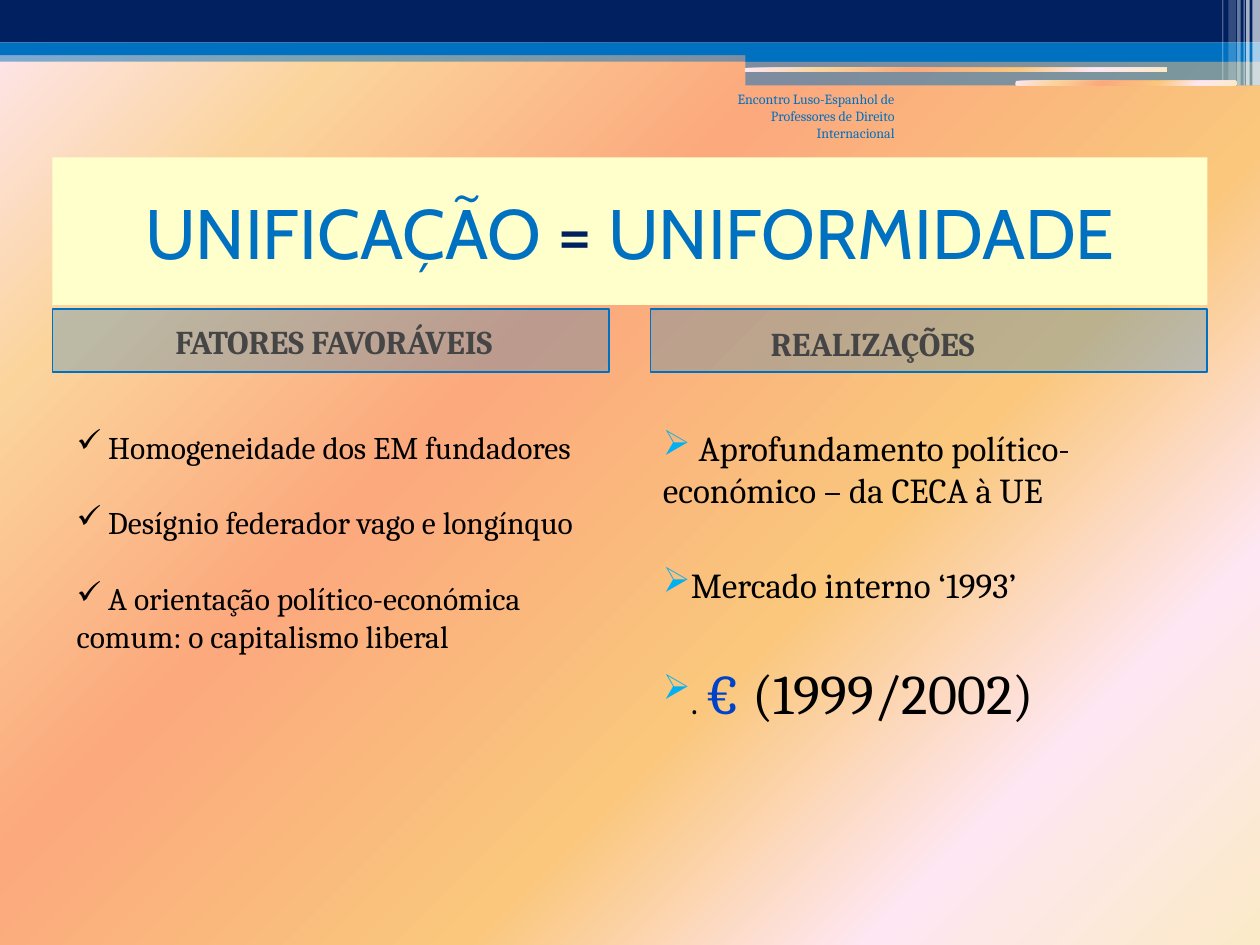
from lxml.etree import SubElement
from pptx import Presentation
from pptx.dml.color import RGBColor
from pptx.enum.shapes import MSO_SHAPE
from pptx.enum.text import MSO_ANCHOR, PP_ALIGN
from pptx.oxml.ns import qn
from pptx.util import Pt

COLORS = {
    "navy": "002060", "blue": "0070C0", "white": "FFFFFF", "cream": "FFFFCC",
    "gray": "454545", "black": "000000", "euro": "0042C8", "sky": "00B0F0",
}
SUNSET = [(0, "FBEAC7"), (18, "FEE7F2"), (36, "FAC77D"),
          (61, "FBA97D"), (82, "FBD49C"), (100, "FEE7F2")]
SERIF, SANS = "Cambria", "Cabin"


def rgb(name):
    return RGBColor.from_string(COLORS[name])


def paint_sunset(fill, owner):
    """Fill with the sunset gradient, spreading from the lower right corner."""
    fill.gradient()
    gradient = next(owner.element.iter(qn("a:gradFill")))
    for child in list(gradient):
        gradient.remove(child)
    stops = SubElement(gradient, qn("a:gsLst"))
    for position, color in SUNSET:
        stop = SubElement(stops, qn("a:gs"), pos=str(position * 1000))
        SubElement(stop, qn("a:srgbClr"), val=color)
    circle = SubElement(gradient, qn("a:path"), path="circle")
    SubElement(circle, qn("a:fillToRect"), l="100000", t="100000")


def add_bar(page, bounds, color=None, opacity=100, kind=MSO_SHAPE.RECTANGLE):
    """Add a borderless bar; without a color it takes the sunset gradient."""
    bar = page.shapes.add_shape(kind, *map(Pt, bounds))
    bar.shadow.inherit = False
    bar.line.fill.background()
    if color is None:
        paint_sunset(bar.fill, bar)
        return bar
    bar.fill.solid()
    bar.fill.fore_color.rgb = rgb(color)
    if opacity < 100:
        tint = next(bar.element.spPr.iter(qn("a:srgbClr")))
        SubElement(tint, qn("a:alpha"), val=str(opacity * 1000))
    return bar


def write_para(para, spans, size, font=SERIF, align=PP_ALIGN.LEFT, bold=None):
    """Write (text, color, optional size) spans into a paragraph."""
    para.alignment = align
    para.font.name, para.font.size, para.font.bold = font, Pt(size), bold
    for text, color, *own_size in spans:
        span = para.add_run()
        span.text = text
        span.font.color.rgb = rgb(color)
        if own_size:
            span.font.size = Pt(own_size[0])


def add_heading(page, bounds, text, left=10.8, right=7.2, top=3.6):
    box = add_bar(page, bounds, "blue", 25)
    box.line.color.rgb = rgb("blue")
    box.line.width = Pt(1)
    frame = box.text_frame
    frame.margin_left, frame.margin_right, frame.margin_top = Pt(left), Pt(right), Pt(top)
    frame.vertical_anchor = MSO_ANCHOR.MIDDLE
    write_para(frame.paragraphs[0], [(text, "gray")], 19, align=PP_ALIGN.CENTER, bold=True)


def add_text(page, bounds):
    frame = page.shapes.add_textbox(*map(Pt, bounds)).text_frame
    frame.word_wrap = True
    return frame


def add_bullets(page, bounds, items, size, mark, top, gap, mark_color=None):
    """Add a list with hanging-free bullets and an even gap between items."""
    frame = add_text(page, bounds)
    frame.margin_top = Pt(top)
    for index, spans in enumerate(items):
        para = frame.add_paragraph() if index else frame.paragraphs[0]
        write_para(para, spans, size)
        para.space_before = Pt(gap if index else 0)
        properties = para._p.get_or_add_pPr()
        properties.set("marL", "0")
        properties.set("indent", "0")
        bullet = properties.makeelement(qn("a:buChar"), {"char": mark})
        properties.find(qn("a:defRPr")).addprevious(bullet)
        if mark_color:
            tint = properties.makeelement(qn("a:buClr"), {})
            SubElement(tint, qn("a:srgbClr"), val=COLORS[mark_color])
            bullet.addprevious(tint)


def add_banner(page):
    # Blue bands across the top
    add_bar(page, (0, 28.8, 720, 6.5), "blue", 50)
    add_bar(page, (0, 0, 720, 24.3), "navy")
    add_bar(page, (0, 24.3, 720, 7.2), "blue")
    add_bar(page, (426, 28, 294, 7.2), "blue")
    add_bar(page, (426, 34.6, 294, 14.2), "blue", 50)
    # Rounded sunset strips
    for bounds in ((425.6, 38.8, 241.2, 2.2), (580.4, 46.2, 126, 2.6)):
        add_bar(page, bounds, kind=MSO_SHAPE.ROUNDED_RECTANGLE)
    # Translucent white stripes at the right edge
    for left, width, height, opacity in (
            (715.7, 4.3, 48.8, 65), (712.1, 2, 48.8, 65), (710.6, 0.7, 48.8, 60),
            (707, 2, 48.8, 40), (702, 4.3, 46.1, 20), (698.4, 0.7, 46.1, 30)):
        add_bar(page, (left, 0, width, height), "white", opacity)


def main():
    deck = Presentation()
    deck.slide_width, deck.slide_height = Pt(720), Pt(540)
    page = deck.slides.add_slide(deck.slide_layouts[6])
    paint_sunset(page.background.fill, page)
    add_banner(page)

    # Title
    title = add_bar(page, (30, 90, 660, 84.3), "cream").text_frame
    title.vertical_anchor = MSO_ANCHOR.MIDDLE
    write_para(title.paragraphs[0],
               [("UNIFICAÇÃO", "blue"), (" = ", "navy"), ("UNIFORMIDADE", "blue")],
               40, SANS, PP_ALIGN.CENTER)

    # Column headings
    add_heading(page, (30, 176.8, 318, 36), "FATORES FAVORÁVEIS")
    add_heading(page, (371.8, 176.8, 318, 36), "REALIZAÇÕES", right=75, top=6)

    # Column lists
    add_bullets(page, (371.8, 213, 318, 306), [
        [(" Aprofundamento político-económico – da CECA à UE", "black")],
        [("Mercado interno ‘1993’", "black")],
        [(". ", "black"), ("€ ", "euro", 32), ("(1999/2002)", "black", 32)],
    ], 20, "➢", top=30.6, gap=30.2, mark_color="sky")
    add_bullets(page, (36.7, 219, 311.3, 225.4), [
        [(" Homogeneidade dos EM fundadores", "black")],
        [(" Desígnio federador vago e longínquo", "black")],
        [(" A orientação político-económica comum: o capitalismo liberal", "black")],
    ], 18, "✓", top=25.3, gap=21.7)

    # Event name
    event = add_text(page, (414, 48.2, 104.4, 36))
    write_para(event.paragraphs[0],
               [("Encontro Luso-Espanhol de Professores de Direito Internacional", "blue")],
               8, align=PP_ALIGN.RIGHT)

    deck.save("out.pptx")


if __name__ == "__main__":
    main()
